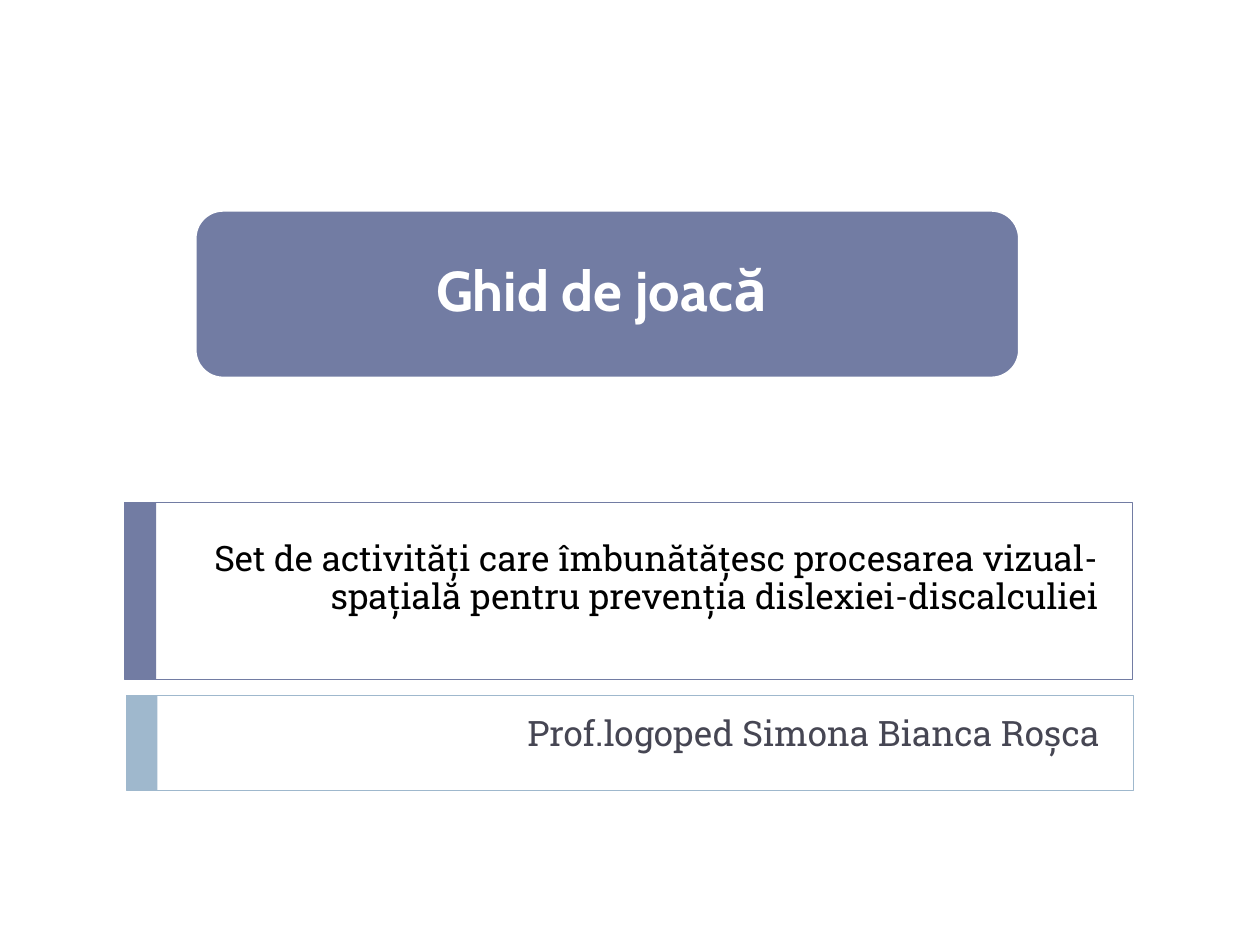
import pptx
import pptx.util
import pptx.dml.color
import pptx.enum.shapes
import pptx.enum.text

WIDTH, HEIGHT = 10, 7.5
COLORS = {
    "indigo": "727CA3",
    "sky": "9FB8CD",
    "white": "FFFFFF",
    "black": "000000",
    "slate": "464653",
}
SHAPES = pptx.enum.shapes.MSO_SHAPE
ALIGN = pptx.enum.text.PP_ALIGN
ANCHOR = pptx.enum.text.MSO_ANCHOR


def rgb(name):
    return pptx.dml.color.RGBColor.from_string(COLORS[name])


def inches(box):
    return [pptx.util.Inches(length) for length in box]


def inset(box, left, top, right, bottom):
    """Shrink a box by a margin on each side."""
    x, y, width, height = box
    return x + left, y + top, width - left - right, height - top - bottom


def add_block(page, box, kind=SHAPES.RECTANGLE, fill=None, line=None, weight=0.5):
    block = page.shapes.add_shape(kind, *inches(box))
    block.shadow.inherit = False
    if fill:
        block.fill.solid()
        block.fill.fore_color.rgb = rgb(fill)
    else:
        block.fill.background()
    if line:
        block.line.color.rgb = rgb(line)
        block.line.width = pptx.util.Pt(weight)
    else:
        block.line.fill.background()
    return block


def add_text(page, box, text, font="Roboto Slab", size=20, color="black", bold=False,
             align=ALIGN.RIGHT, anchor=ANCHOR.TOP, spacing=1.0, margins=(0.1, 0.05)):
    frame = page.shapes.add_textbox(*inches(box)).text_frame
    frame.word_wrap = True
    frame.vertical_anchor = anchor
    frame.margin_left = frame.margin_right = pptx.util.Inches(margins[0])
    frame.margin_top = frame.margin_bottom = pptx.util.Inches(margins[1])
    para = frame.paragraphs[0]
    para.alignment = align
    para.line_spacing = spacing
    span = para.add_run()
    span.text = text
    span.font.name = font
    span.font.size = pptx.util.Pt(size)
    span.font.bold = bold
    span.font.color.rgb = rgb(color)


def add_banner(page, box, text):
    add_block(page, box, SHAPES.ROUNDED_RECTANGLE, fill="indigo", line="white", weight=1.5)
    add_text(page, inset(box, 0.07, 0.06, 0.06, 0.07), text, font="Cabin", size=32,
             color="white", bold=True, align=ALIGN.CENTER, anchor=ANCHOR.MIDDLE,
             spacing=0.9, margins=(0.13, 0.13))


def add_panel(page, box, text, accent, top, **text_format):
    """Outlined panel with an accent bar on its left and right-aligned text."""
    left, y, width, height = box
    add_block(page, box, line=accent)
    add_block(page, (left, y, WIDTH * 0.025, height), fill=accent)
    add_text(page, inset(box, 0.33, top, 0.17, 0.07), text, **text_format)


def main():
    deck = pptx.Presentation()
    deck.slide_width, deck.slide_height = inches((WIDTH, HEIGHT))
    page = deck.slides.add_slide(deck.slide_layouts[6])

    panel_width = WIDTH * 0.8
    add_panel(page, (0.99, 3.99, panel_width, 1.4),
              "Set de activități care îmbunătățesc procesarea vizual-spațială "
              "pentru prevenția dislexiei-discalculiei",
              "indigo", top=0.26, spacing=0.9)
    add_panel(page, (1, 5.52, panel_width, 0.75), "Prof.logoped Simona Bianca Roșca",
              "sky", top=0.08, color="slate")
    add_banner(page, (1.55, 1.67, 6.54, 1.33), "Ghid de joacă ")

    deck.save("out.pptx")


if __name__ == "__main__":
    main()
